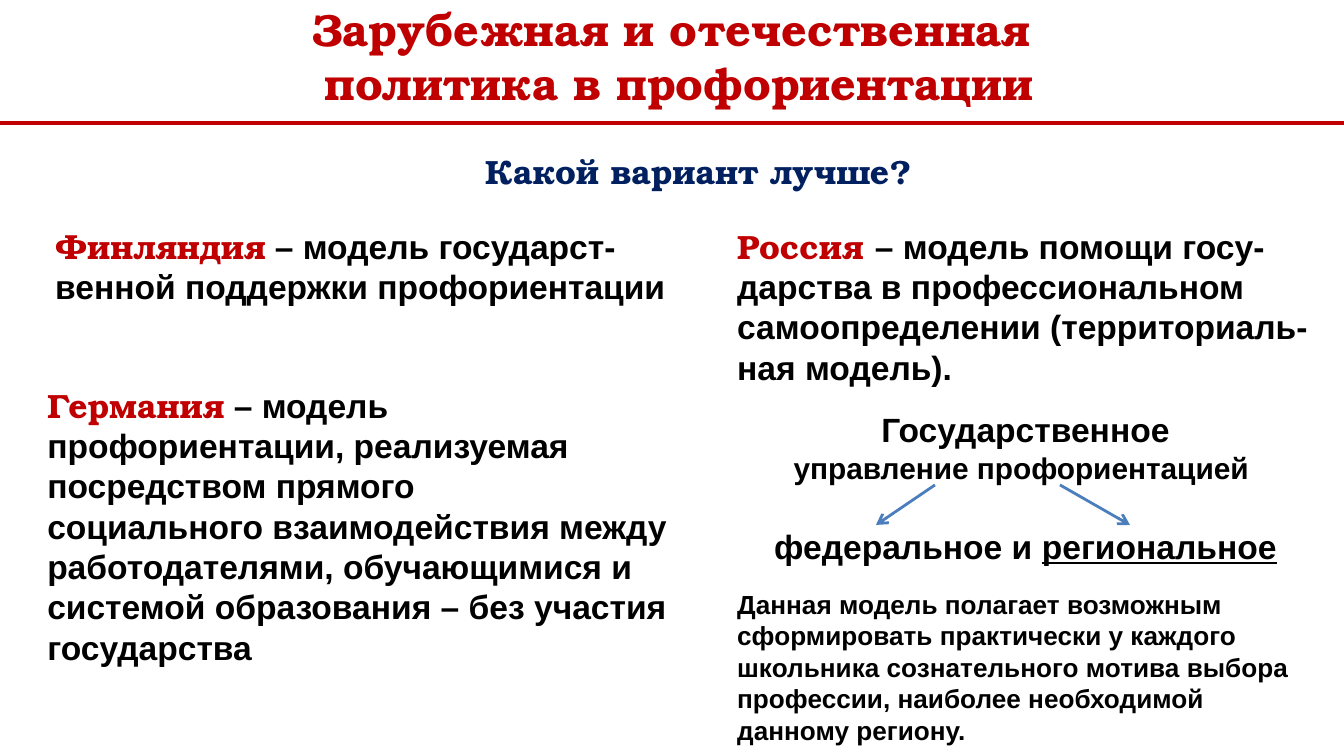
from pptx import Presentation
from pptx.dml.color import RGBColor
from pptx.enum.shapes import MSO_CONNECTOR
from pptx.enum.text import PP_ALIGN as ALIGN
from pptx.oxml.ns import qn
from pptx.util import Pt
from lxml.etree import SubElement

PX = 9144000 / 1344
COLORS = {"red": "C00000", "navy": "002060", "black": "000000", "arrow": "4B7EBC"}
SERIF, SANS = "TeX Gyre Bonum", "Arial"
LINE_HEIGHT = 1.2


def px(value):
    return round(value * PX)


def heading(text, size=18, color="red"):
    return text, size, SERIF, color, False


def body(text, size=18, underline=False):
    return text, size, SANS, "black", underline


def add_text(slide, box, paragraphs):
    frame = slide.shapes.add_textbox(*map(px, box)).text_frame
    frame.word_wrap = True
    for index, (runs, align, gap) in enumerate(paragraphs):
        paragraph = frame.paragraphs[0] if index == 0 else frame.add_paragraph()
        paragraph.alignment = align
        paragraph.line_spacing = Pt(LINE_HEIGHT * runs[0][1])
        if gap:
            paragraph.space_before = Pt(LINE_HEIGHT * gap)
        for text, size, face, color, underline in runs:
            run = paragraph.add_run()
            run.text = text
            font = run.font
            font.name, font.size, font.bold = face, Pt(size), True
            font.color.rgb = RGBColor.from_string(COLORS[color])
            if underline:
                font.underline = True


def left(*runs, gap=0):
    return runs, ALIGN.LEFT, gap


def centered(*runs, gap=0):
    return runs, ALIGN.CENTER, gap


def add_line(slide, start, end, color, width, arrow=False):
    line = slide.shapes.add_connector(
        MSO_CONNECTOR.STRAIGHT, *map(px, (*start, *end)))
    line.line.color.rgb = RGBColor.from_string(COLORS[color])
    line.line.width = Pt(width)
    if arrow:
        SubElement(line.line._get_or_add_ln(), qn("a:tailEnd"), type="arrow")
    SubElement(line._element.spPr, qn("a:effectLst"))


def add_header(slide, x, y, width, height):
    add_text(slide, (x + 7, y - 5, width, height), [
        centered(heading("Зарубежная и отечественная ", 24)),
        centered(heading("политика в профориентации", 24)),
    ])
    add_line(slide, (x, y + 123), (x + width, y + 123), "red", 2)


def add_question(slide, *box):
    add_text(slide, box, [left(heading("Какой вариант лучше?", color="navy"))])


def add_foreign_models(slide, x, y, width, height):
    add_text(slide, (x + 8, y, width - 15, 95), [
        left(heading("Финляндия"), body(" – модель государст-")),
        left(body("венной поддержки профориентации")),
    ])
    add_text(slide, (x, y + 159, width, height - 159), [
        left(heading("Германия"),
             body(" – модель профориентации, реализуемая посредством прямого")),
        left(body("социального взаимодействия между работодателями, обучающимися и")),
        left(body("системой образования – без участия государства")),
    ])


def add_russian_model(slide, x, y, width, height):
    conclusion = [
        "Данная модель полагает возможным",
        "сформировать практически у каждого",
        "школьника сознательного мотива выбора",
        "профессии, наиболее необходимой",
        "данному региону.",
    ]
    add_text(slide, (x, y, width, height), [
        left(heading("Россия "), body("– модель помощи госу-")),
        left(body("дарства в профессиональном")),
        left(body("самоопределении (территориаль-ная модель).")),
        centered(body("Государственное"), gap=10),
        centered(body("управление профориентацией ", 16)),
        centered(body("федеральное и "), body("региональное", underline=True), gap=18),
        *(left(body(text, 14), gap=0 if index else 10)
          for index, text in enumerate(conclusion)),
    ])
    for start, end in ((211, 152), (336, 406)):
        add_line(slide, (x + start, y + 266), (x + end, y + 306), "arrow", 1.5, True)


def main():
    deck = Presentation()
    deck.slide_width, deck.slide_height = px(1344), px(756)
    slide = deck.slides.add_slide(deck.slide_layouts[6])
    add_header(slide, 0, 0, 1344, 176)
    add_russian_model(slide, 724, 219, 603, 539)
    add_foreign_models(slide, 34, 219, 660, 417)
    add_question(slide, 472, 144, 462, 54)
    deck.save("out.pptx")


if __name__ == "__main__":
    main()
